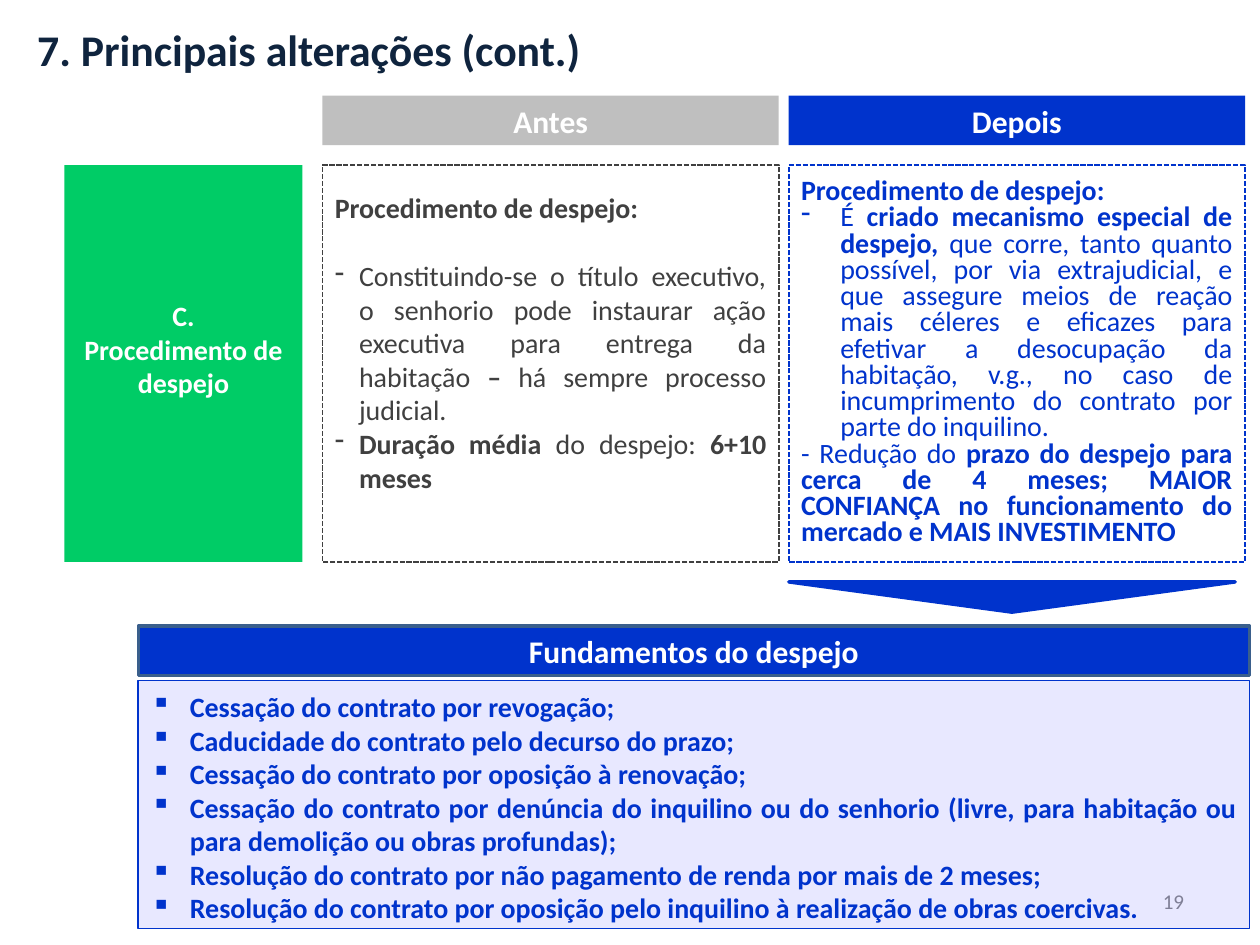
from dataclasses import dataclass
from typing import Optional

from lxml.etree import SubElement
from pptx import Presentation
from pptx.dml.color import RGBColor
from pptx.enum.dml import MSO_LINE
from pptx.enum.shapes import MSO_SHAPE
from pptx.enum.text import MSO_ANCHOR, PP_ALIGN
from pptx.oxml.ns import qn
from pptx.util import Cm, Pt

COLOURS = {
    "navy": "0F243E",
    "blue": "0033CC",
    "green": "00CC66",
    "silver": "BFBFBF",
    "charcoal": "404040",
    "steel": "3A5F8C",
    "lavender": "0000FF",
    "number": "8C8C8C",
    "white": "FFFFFF",
}
FONT = "Calibri"
BEFORE_LEFT, AFTER_LEFT, COLUMN_WIDTH = 6.5, 15.9, 9.2
HEADER_TOP, HEADER_HEIGHT = 1.93, 1.0
BODY_TOP, BODY_HEIGHT = 3.33, 8.0
GROUNDS_LEFT, GROUNDS_WIDTH = 2.79, 22.4


@dataclass
class Span:
    text: str
    bold: bool = True


@dataclass
class Para:
    spans: list[Span]
    bullet: str = ""
    indent: float = 0
    space_after: float = 0


@dataclass
class Block:
    left: float
    top: float
    width: float
    height: float
    paras: list[Para]
    colour: str = "white"
    size: float = 16
    align: PP_ALIGN = PP_ALIGN.CENTER
    anchor: MSO_ANCHOR = MSO_ANCHOR.MIDDLE
    margin_top: float = 0.13
    spacing: Optional[float] = None
    wrap: bool = True
    fill: str = ""
    opacity: int = 100
    line: str = ""
    line_width: float = 1
    dashed: bool = False
    preset: Optional[MSO_SHAPE] = MSO_SHAPE.RECTANGLE
    rotation: float = 0


def rgb(name: str) -> RGBColor:
    return RGBColor.from_string(COLOURS[name])


def plain(text: str, bold: bool = True) -> list[Para]:
    return [Para([Span(text, bold)])]


def paint(shape, block: Block) -> None:
    shape.shadow.inherit = False
    shape.rotation = block.rotation
    if block.fill:
        shape.fill.solid()
        shape.fill.fore_color.rgb = rgb(block.fill)
        if block.opacity < 100:
            colour = shape.fill._xPr.find(qn("a:solidFill"))[0]
            SubElement(colour, qn("a:alpha"), val=str(block.opacity * 1000))
    else:
        shape.fill.background()
    if block.line:
        shape.line.color.rgb = rgb(block.line)
        shape.line.width = Pt(block.line_width)
        if block.dashed:
            shape.line.dash_style = MSO_LINE.SQUARE_DOT
            dash = shape.line._ln.find(qn("a:prstDash"))
            dash.set("val", "sysDash")
    else:
        shape.line.fill.background()


def write(paragraph, para: Para, block: Block) -> None:
    paragraph.alignment = block.align
    paragraph.space_after = Pt(para.space_after)
    if block.spacing:
        paragraph.line_spacing = Pt(block.spacing)
    if para.bullet:
        properties = paragraph._p.get_or_add_pPr()
        properties.set("marL", str(Cm(para.indent)))
        properties.set("indent", str(-Cm(para.indent)))
        SubElement(properties, qn("a:buChar"), char=para.bullet)
    font = paragraph.font
    font.name, font.size = FONT, Pt(block.size)
    font.color.rgb = rgb(block.colour)
    mixed = len({span.bold for span in para.spans}) > 1
    if not mixed:
        font.bold = para.spans[0].bold
    for span in para.spans:
        run = paragraph.add_run()
        run.text = span.text
        if mixed:
            run.font.bold = span.bold


def draw(page, block: Block) -> None:
    place = [Cm(value) for value in (block.left, block.top, block.width, block.height)]
    if block.preset is None:
        box = page.shapes.add_textbox(*place)
    else:
        box = page.shapes.add_shape(block.preset, *place)
        paint(box, block)
    frame = box.text_frame
    frame.word_wrap = block.wrap
    frame.vertical_anchor = block.anchor
    frame.margin_top = Cm(block.margin_top)
    for index, para in enumerate(block.paras):
        paragraph = frame.add_paragraph() if index else frame.paragraphs[0]
        write(paragraph, para, block)


def header(left: float, text: str, fill: str) -> Block:
    return Block(left, HEADER_TOP, COLUMN_WIDTH, HEADER_HEIGHT, plain(text), size=18, fill=fill)


def column(left: float, paras: list[Para], colour: str, **options) -> Block:
    return Block(left, BODY_TOP, COLUMN_WIDTH, BODY_HEIGHT, paras, colour=colour,
                 align=PP_ALIGN.JUSTIFY, line=colour, dashed=True, **options)


BEFORE = [
    Para([Span("Procedimento de despejo: ")], space_after=19.5),
    Para([Span("Constituindo-se o título executivo, o senhorio pode instaurar ação "
               "executiva para entrega da habitação ", False),
          Span("–"), Span(" há sempre processo judicial.", False)], "-", 0.49),
    Para([Span("Duração média "), Span("do despejo: ", False), Span("6+10 meses")], "-", 0.49),
]
AFTER = [
    Para([Span("Procedimento de despejo: ")]),
    Para([Span("É ", False), Span("criado mecanismo especial de despejo, "),
          Span("que corre, tanto quanto possível, por via extrajudicial, e que assegure "
               "meios de reação mais céleres e eficazes para efetivar a desocupação da "
               "habitação, v.g., no caso de incumprimento do contrato por parte do "
               "inquilino.", False)], "-", 0.79),
    Para([Span("- Redução do", False),
          Span(" prazo do despejo para cerca de 4 meses; MAIOR CONFIANÇA no "
               "funcionamento do mercado e MAIS INVESTIMENTO")]),
]
GROUNDS = [
    "Cessação do contrato por revogação;",
    "Caducidade do contrato pelo decurso do prazo;",
    "Cessação do contrato por oposição à renovação;",
    "Cessação do contrato por denúncia do inquilino ou do senhorio (livre, para "
    "habitação ou para demolição ou obras profundas);",
    "Resolução do contrato por não pagamento de renda por mais de 2 meses;",
    "Resolução do contrato por oposição pelo inquilino à realização de obras coercivas.",
]
BLOCKS = [
    Block(0.5, 0.33, 11.6, 1.32, plain("7. Principais alterações (cont.)"), "navy", 25,
          PP_ALIGN.LEFT, MSO_ANCHOR.TOP, wrap=False, preset=None),
    header(BEFORE_LEFT, "Antes", "silver"),
    header(AFTER_LEFT, "Depois", "blue"),
    column(BEFORE_LEFT, BEFORE, "charcoal", anchor=MSO_ANCHOR.TOP, margin_top=0.52),
    column(AFTER_LEFT, AFTER, "blue", spacing=15),
    Block(1.3, BODY_TOP, 4.8, BODY_HEIGHT, plain("C.") + plain("Procedimento de despejo"),
          anchor=MSO_ANCHOR.TOP, margin_top=2.69, fill="green"),
    Block(18.2, 17.65, 5.92, 1.02, plain("19", False), "number", 12,
          PP_ALIGN.RIGHT, preset=None),
    Block(AFTER_LEFT, 11.73, 9.0, 0.61, [], fill="blue", line="blue", line_width=2,
          preset=MSO_SHAPE.ISOSCELES_TRIANGLE, rotation=180),
    Block(GROUNDS_LEFT, 13.72, GROUNDS_WIDTH, 5.0,
          [Para([Span(text)], "▪", 0.79) for text in GROUNDS], "blue",
          align=PP_ALIGN.JUSTIFY, anchor=MSO_ANCHOR.TOP, margin_top=0.18,
          fill="lavender", opacity=9, line="blue"),
    Block(GROUNDS_LEFT, 12.62, GROUNDS_WIDTH, HEADER_HEIGHT, plain("Fundamentos do despejo"),
          size=18, fill="blue", line="steel", line_width=2),
]


def main() -> None:
    deck = Presentation()
    deck.slide_width, deck.slide_height = Cm(25.4), Cm(19.05)
    page = deck.slides.add_slide(deck.slide_layouts[6])
    for block in BLOCKS:
        draw(page, block)
    deck.save("out.pptx")


if __name__ == "__main__":
    main()
